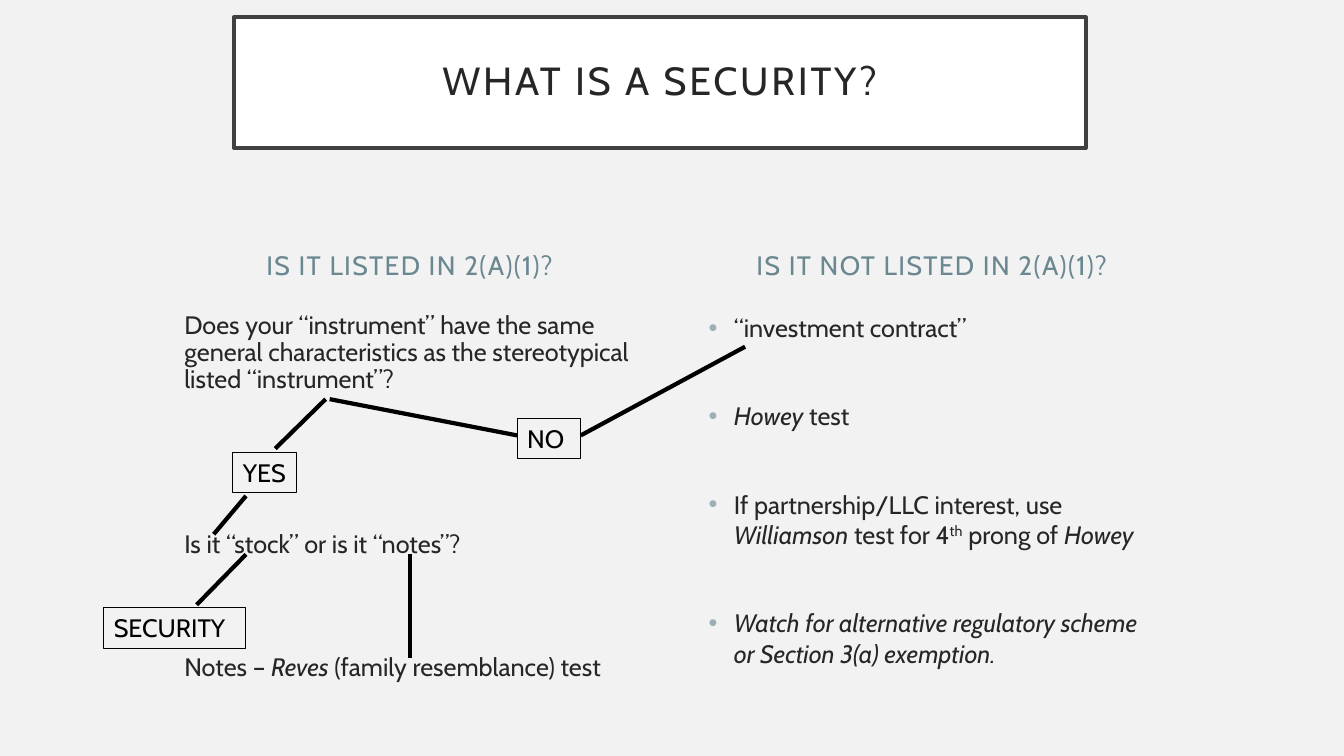
from pptx import Presentation
from pptx.dml.color import RGBColor
from pptx.enum.shapes import MSO_CONNECTOR as Connector, MSO_SHAPE as Shape
from pptx.enum.text import MSO_ANCHOR as Anchor, PP_ALIGN as Align
from pptx.oxml.ns import qn
from pptx.util import Inches, Pt
from lxml.etree import SubElement

TITLE = "WHAT IS A SECURITY?"
HEADINGS = [
    ("IS IT LISTED IN 2(A)(1)?", 1.73),
    ("IS IT NOT LISTED IN 2(A)(1)?", 6.91),
]
LISTED = [
    (10, [("Does your “instrument” have the same general characteristics "
           "as the stereotypical listed “instrument”?", "")]),
    (98.5, [("Is it “stock” or is it “notes”?", "")]),
    (68.5, [("Notes – ", ""), ("Reves", "italic"),
            (" (family resemblance) test", "")]),
]
NOT_LISTED = [
    (10, [("“investment contract”", "")]),
    (41.5, [("Howey", "italic"), (" test", "")]),
    (41.5, [("If partnership/LLC interest, use ", ""),
            ("Williamson", "italic"), (" test for 4", ""),
            ("th", "super"), (" prong of ", ""), ("Howey", "italic")]),
    (41.5, [("Watch for alternative regulatory scheme "
             "or Section 3(a) exemption.", "italic")]),
]
ANSWERS = [("YES", 2.31, 4.49, 0.63), ("NO", 5.13, 4.15, 0.63),
           ("SECURITY", 1.03, 6.03, 1.41)]
BRANCHES = [
    ((3.23, 3.96), (2.73, 4.45)),
    ((2.44, 4.92), (2.12, 5.3)),
    ((5.13, 4.32), (3.27, 3.96)),
    ((7.39, 3.44), (5.76, 4.32)),
    ((2.44, 5.5), (1.95, 6)),
    ((4.07, 5.5), (4.07, 6.53)),
]
THEME = {
    "font": "Cabin", "background": "F2F2F2", "panel": "FFFFFF",
    "frame": "404040", "text": "262626", "heading": "6B8891",
    "bullet": "9BAFB5", "ink": "000000",
    "title_size": 28, "heading_size": 19, "body_size": 18,
}


def color(role):
    return RGBColor.from_string(THEME[role])


def add_run(paragraph, words, size, role, style="", tracking=0):
    run = paragraph.add_run()
    run.text = words
    font = run.font
    font.name, font.size = THEME["font"], Pt(THEME[size])
    font.color.rgb = color(role)
    if style == "italic":
        font.italic = True
    if style == "super":
        run._r.get_or_add_rPr().set("baseline", "30000")
    if tracking:
        run._r.get_or_add_rPr().set("spc", str(tracking * 100))


def add_text(slide, left, top, width, height):
    frame = slide.shapes.add_textbox(
        Inches(left), Inches(top), Inches(width), Inches(height)).text_frame
    frame.word_wrap = True
    return frame


def add_box(slide, left, top, width, height, line_role, line_width):
    box = slide.shapes.add_shape(
        Shape.RECTANGLE, Inches(left), Inches(top), Inches(width), Inches(height))
    box.shadow.inherit = False
    box.fill.background()
    box.line.color.rgb = color(line_role)
    box.line.width = Pt(line_width)
    box.text_frame.word_wrap = True
    return box


def add_bullet(paragraph):
    props = paragraph._p.get_or_add_pPr()
    props.set("marL", str(Inches(0.25)))
    props.set("indent", str(-Inches(0.25)))
    tint = SubElement(props, qn("a:buClr"))
    SubElement(tint, qn("a:srgbClr")).set("val", THEME["bullet"])
    SubElement(props, qn("a:buFont")).set("typeface", "Arial")
    SubElement(props, qn("a:buChar")).set("char", "•")


def add_column(slide, left, width, items, spacing, bulleted):
    frame = add_text(slide, left, 3.05, width, 4.05)
    for index, (gap, runs) in enumerate(items):
        paragraph = frame.add_paragraph() if index else frame.paragraphs[0]
        paragraph.line_spacing = spacing
        paragraph.space_before = Pt(gap)
        if bulleted:
            add_bullet(paragraph)
        for words, style in runs:
            add_run(paragraph, words, "body_size", "text", style)


def add_heading(slide, words, left):
    frame = add_text(slide, left, 2.07, 4.67, 0.77)
    frame.vertical_anchor = Anchor.BOTTOM
    frame.paragraphs[0].alignment = Align.CENTER
    add_run(frame.paragraphs[0], words, "heading_size", "heading", tracking=1)


def add_title(slide):
    panel = add_box(slide, 2.32, 0.17, 8.45, 1.3, "frame", 2.5)
    panel.fill.solid()
    panel.fill.fore_color.rgb = color("panel")
    frame = panel.text_frame
    frame.margin_left = frame.margin_right = Inches(0.2)
    frame.margin_top = frame.margin_bottom = Inches(0.2)
    frame.vertical_anchor = Anchor.MIDDLE
    frame.paragraphs[0].alignment = Align.CENTER
    frame.paragraphs[0].line_spacing = 0.9
    add_run(frame.paragraphs[0], TITLE, "title_size", "text", tracking=2)


def add_answer(slide, words, left, top, width):
    frame = add_box(slide, left, top, width, 0.4, "ink", 0.75).text_frame
    frame.margin_right = 0
    frame.vertical_anchor = Anchor.TOP
    frame.paragraphs[0].alignment = Align.LEFT
    add_run(frame.paragraphs[0], words, "body_size", "ink")


def add_branch(slide, start, end):
    branch = slide.shapes.add_connector(
        Connector.STRAIGHT, *[Inches(value) for value in start + end])
    branch.line.color.rgb = color("ink")
    branch.line.width = Pt(3)
    SubElement(branch._element.spPr, qn("a:effectLst"))


def main():
    deck = Presentation()
    deck.slide_width, deck.slide_height = Inches(13.33), Inches(7.5)
    slide = deck.slides.add_slide(deck.slide_layouts[6])
    slide.background.fill.solid()
    slide.background.fill.fore_color.rgb = color("background")
    for heading in HEADINGS:
        add_heading(slide, *heading)
    add_column(slide, 1.73, 4.67, LISTED, 0.9, False)
    add_column(slide, 6.93, 4.65, NOT_LISTED, 1.0, True)
    add_title(slide)
    for answer in ANSWERS:
        add_answer(slide, *answer)
    for branch in BRANCHES:
        add_branch(slide, *branch)
    deck.save("out.pptx")


if __name__ == "__main__":
    main()
